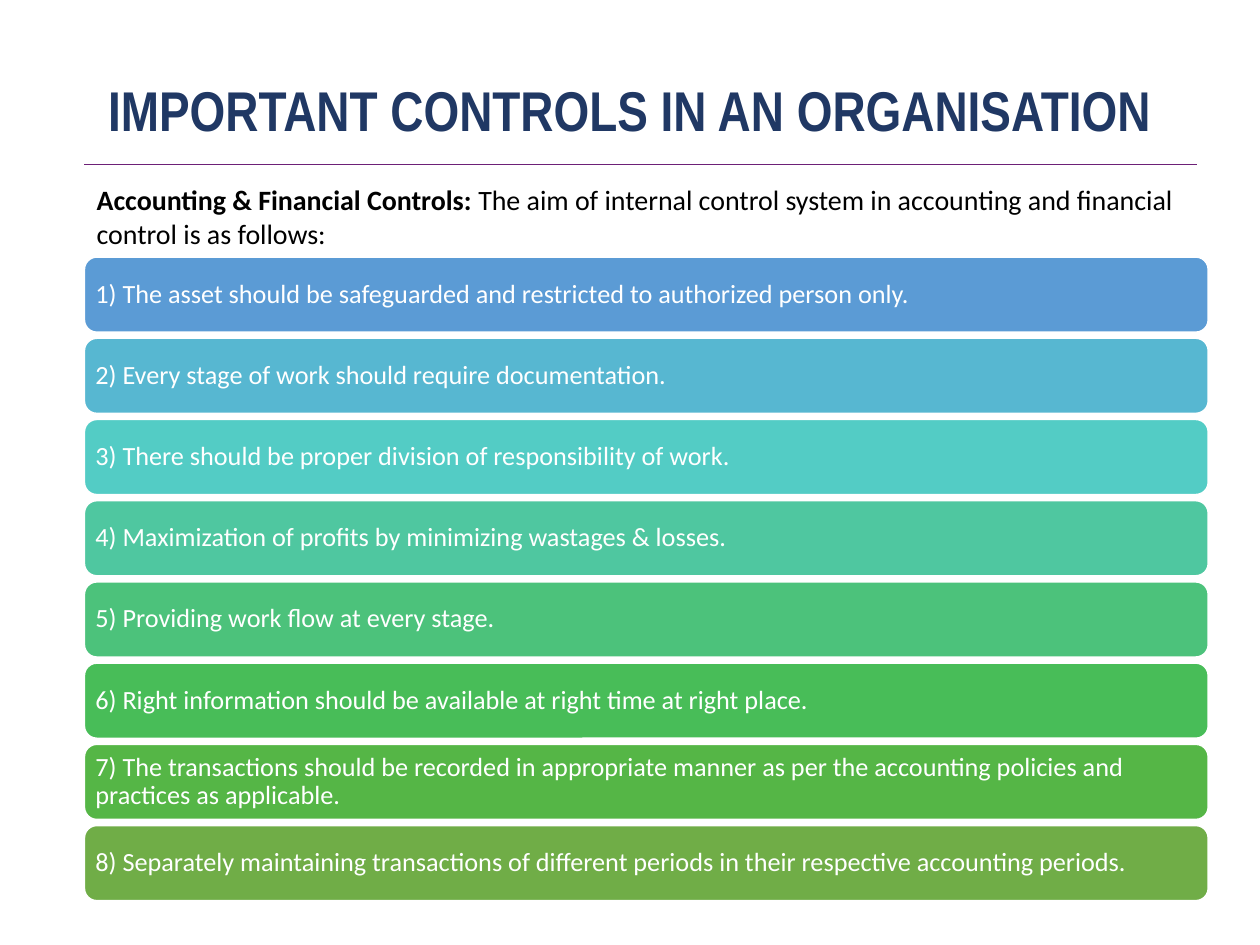
from pptx import Presentation
from pptx import util as u
from pptx.dml.color import RGBColor
from pptx.enum import shapes, text
from pptx.oxml.ns import qn
from lxml import etree

COLOURS = {
    "title": "203864",
    "rule": "6D2077",
    "body": "000000",
    "white": "FFFFFF",
}
# Each control with the colour of its bar
CONTROLS = [
    ("The asset should be safeguarded and restricted to authorized person only.", "5B9BD5"),
    ("Every stage of work should require documentation.", "57B7D1"),
    ("There should be proper division of responsibility of work.", "53CCC5"),
    ("Maximization of profits by minimizing wastages & losses.", "4FC7A0"),
    ("Providing work flow at every stage.", "4CC27B"),
    ("Right information should be available at right time at right place.", "48BD58"),
    ("The transactions should be recorded in appropriate manner as per the "
     "accounting policies and practices as applicable.", "55B646"),
    ("Separately maintaining transactions of different periods in their "
     "respective accounting periods.", "70AD47"),
]
LEFT = 1.7
RULE_WIDTH = 22.43
BAR_WIDTH, BAR_HEIGHT = 22.66, 1.52
FIRST_TOP, LAST_TOP = 5.18, 16.64


def colour(value):
    return RGBColor.from_string(value)


def add_span(para, words, size, value, bold=False, face="Calibri"):
    span = para.add_run()
    span.text = words
    span.font.name = face
    span.font.size = u.Pt(size)
    span.font.bold = bold
    span.font.color.rgb = colour(value)


def add_title(page, words):
    title = page.shapes.title
    title.left, title.top = u.Cm(1.27), u.Cm(1.24)
    title.width, title.height = u.Cm(22.86), u.Cm(2.08)
    frame = title.text_frame
    frame.word_wrap = True
    frame.auto_size = text.MSO_AUTO_SIZE.NONE
    frame.vertical_anchor = text.MSO_ANCHOR.MIDDLE
    para = frame.paragraphs[0]
    para.alignment = text.PP_ALIGN.CENTER
    para.line_spacing = 0.9
    add_span(para, words, 32, COLOURS["title"], True, "Arial Narrow")


def add_rule(page, top):
    rule = page.shapes.add_connector(
        shapes.MSO_CONNECTOR.STRAIGHT,
        u.Cm(LEFT), u.Cm(top), u.Cm(LEFT + RULE_WIDTH), u.Cm(top))
    rule.line.color.rgb = colour(COLOURS["rule"])
    rule.line.width = u.Pt(0.5)
    etree.SubElement(rule._element.spPr, qn("a:effectLst"))


def add_intro(page, heading, words):
    box = page.shapes.add_textbox(u.Cm(LEFT), u.Cm(3.56), u.Cm(RULE_WIDTH), u.Cm(1.62))
    frame = box.text_frame
    frame.word_wrap = True
    frame.auto_size = text.MSO_AUTO_SIZE.SHAPE_TO_FIT_TEXT
    para = frame.paragraphs[0]
    add_span(para, heading, 16, COLOURS["body"], True)
    add_span(para, words, 16, COLOURS["body"])


def add_bar(page, top, words, fill):
    bar = page.shapes.add_shape(
        shapes.MSO_SHAPE.ROUNDED_RECTANGLE,
        u.Cm(LEFT), u.Cm(top), u.Cm(BAR_WIDTH), u.Cm(BAR_HEIGHT))
    bar.shadow.inherit = False
    bar.fill.solid()
    bar.fill.fore_color.rgb = colour(fill)
    bar.line.color.rgb = colour(COLOURS["white"])
    bar.line.width = u.Pt(1)
    frame = bar.text_frame
    frame.word_wrap = True
    frame.vertical_anchor = text.MSO_ANCHOR.MIDDLE
    frame.margin_left = frame.margin_right = u.Cm(0.15)
    frame.margin_top = frame.margin_bottom = u.Cm(0.15)
    para = frame.paragraphs[0]
    para.alignment = text.PP_ALIGN.LEFT
    para.line_spacing = 0.9
    add_span(para, words, 15, COLOURS["white"])


def main():
    deck = Presentation()
    deck.slide_width, deck.slide_height = u.Cm(25.4), u.Cm(19.05)
    page = deck.slides.add_slide(deck.slide_layouts.get_by_name("Title Only"))

    # Heading
    add_rule(page, 3.32)
    add_title(page, "IMPORTANT CONTROLS IN AN ORGANISATION")

    # Numbered bars, evenly spaced
    pitch = (LAST_TOP - FIRST_TOP) / (len(CONTROLS) - 1)
    for index, (words, fill) in enumerate(CONTROLS):
        add_bar(page, FIRST_TOP + index * pitch, f"{index + 1}) {words}", fill)

    # Introduction above the bars
    add_intro(page, "Accounting & Financial Controls: ",
              "The aim of internal control system in accounting and financial "
              "control is as follows:")

    deck.save("out.pptx")


if __name__ == "__main__":
    main()
